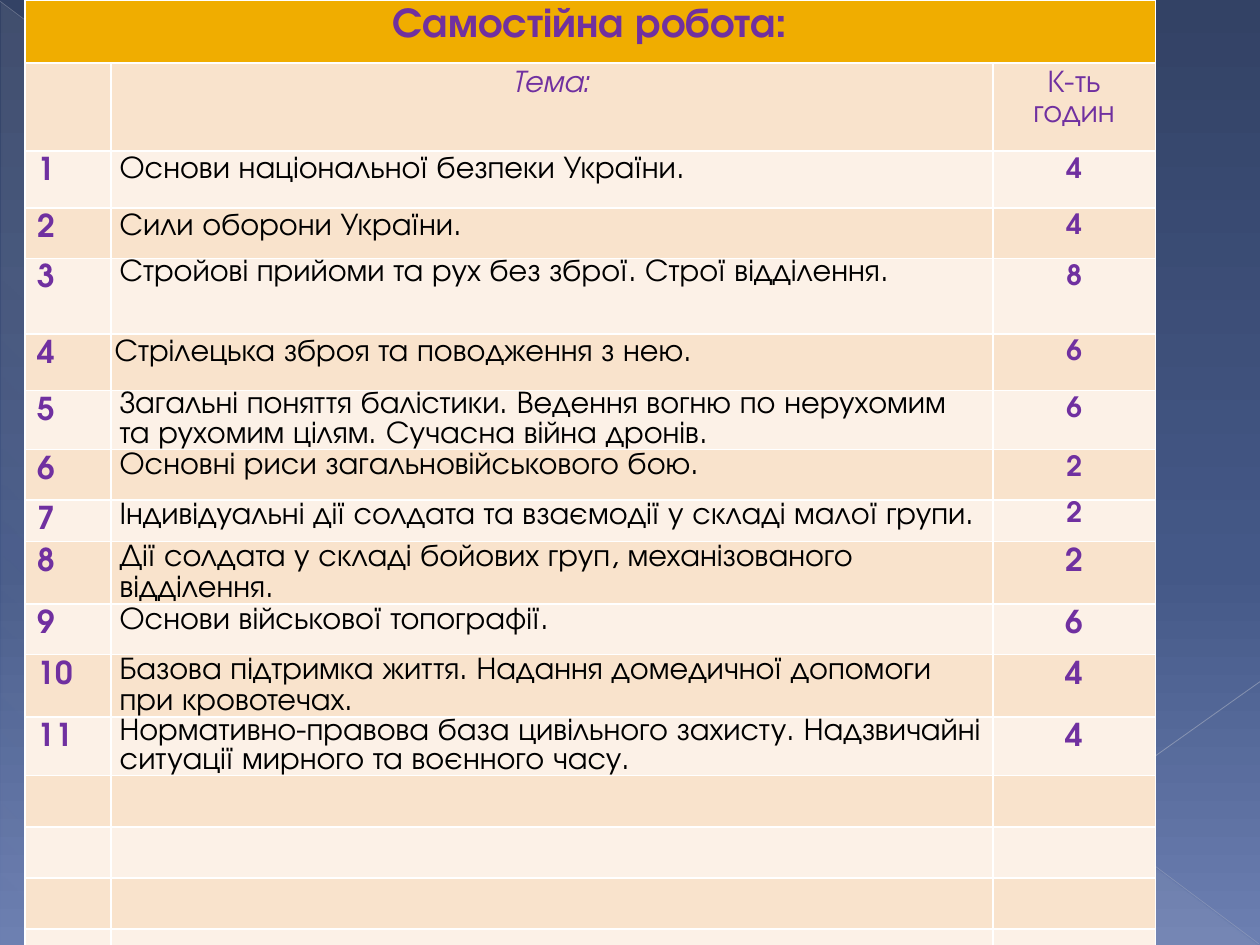
from pptx import Presentation
from pptx.dml.color import RGBColor
from pptx.enum.shapes import MSO_CONNECTOR, MSO_SHAPE
from pptx.enum.text import PP_ALIGN
from pptx.oxml import parse_xml
from pptx.oxml.ns import nsdecls, qn
from pptx.util import Inches, Pt

FONT = "TeX Gyre Adventor"
PURPLE = RGBColor(0x70, 0x30, 0xA0)
BLACK = RGBColor(0, 0, 0)
GOLD = RGBColor(0xF0, 0xAD, 0x00)
PEACH = RGBColor(0xF9, 0xE3, 0xCC)
CREAM = RGBColor(0xFC, 0xF1, 0xE7)
WHITE = RGBColor(0xFF, 0xFF, 0xFF)
NAVY = RGBColor(0x33, 0x42, 0x65)
BLUE = RGBColor(0x44, 0x58, 0x87)
SKY = RGBColor(0x6C, 0x7F, 0xB1)
SILVER = RGBColor(0xD4, 0xD4, 0xD6)
GREY = RGBColor(0xB9, 0xBD, 0xC8)
PALE_GREY = RGBColor(0xC1, 0xC4, 0xCE)

COLUMN_WIDTHS = [0.68, 7, 1.29]
ROW_HEIGHTS = [0.5, 0.7, 0.45, 0.4, 0.6, 0.45, 0.4, 0.4, 0.3] + [0.4] * 7 + [0.38]

WIDE = {"spacing": 1.15}
LOOSE = {"spacing": 1.06, "after": 8}
# Topic, hours, size of the hours, topic format
TOPICS = [
    ("Основи національної безпеки України.", 4, 16, WIDE),
    ("Сили оборони України.", 4, 16, WIDE),
    ("Стройові прийоми та рух без зброї. Строї відділення.", 8, 16, {}),
    ("Стрілецька зброя та поводження з нею.", 6, 16,
     {"spacing": 1.15, "after": 10, "side": 0.03}),
    ("Загальні поняття балістики. Ведення вогню по нерухомим та рухомим цілям. "
     "Сучасна війна дронів.", 6, 16, {}),
    ("Основні риси загальновійськового бою.", 2, 16, LOOSE),
    ("Індивідуальні дії солдата та взаємодії у складі малої групи.", 2, 16, LOOSE),
    ("Дії солдата у складі бойових груп, механізованого відділення.", 2, 18, LOOSE),
    ("Основи військової топографії.", 6, 18, LOOSE),
    ("Базова підтримка життя. Надання домедичної допомоги при кровотечах.", 4, 18, LOOSE),
    ("Нормативно-правова база цивільного захисту. Надзвичайні ситуації мирного "
     "та воєнного часу.", 4, 18, {}),
]
TIGHT_HOURS_ROW = 7


def set_gradient(fill, element, stops, angle):
    """Give a fill its stops (position, colour, opacity in percent) and angle."""
    fill.gradient()
    gradient = element.find(".//" + qn("a:gradFill"))
    stops_xml = "".join(
        f'<a:gs pos="{position * 1000}"><a:srgbClr val="{color}">'
        f'<a:alpha val="{opacity * 1000}"/></a:srgbClr></a:gs>'
        for position, color, opacity in stops)
    for child in list(gradient):
        gradient.remove(child)
    gradient.append(parse_xml(f'<a:gsLst {nsdecls("a")}>{stops_xml}</a:gsLst>'))
    gradient.append(parse_xml(
        f'<a:lin {nsdecls("a")} ang="{angle * 60000}" scaled="0"/>'))


def add_line(slide, start, end, color, width, opacity):
    points = [Inches(value) for value in (*start, *end)]
    line = slide.shapes.add_connector(MSO_CONNECTOR.STRAIGHT, *points)
    line.line.color.rgb = color
    line.line.width = Pt(width)
    line._element.find(".//" + qn("a:srgbClr")).append(
        parse_xml(f'<a:alpha {nsdecls("a")} val="{opacity * 1000}"/>'))
    line._element.spPr.append(parse_xml(f'<a:effectLst {nsdecls("a")}/>'))


def add_backdrop(slide):
    set_gradient(slide.background.fill, slide._element,
                 [(0, NAVY, 100), (60, BLUE, 100), (100, SKY, 100)], 90)
    triangle = slide.shapes.add_shape(
        MSO_SHAPE.RIGHT_TRIANGLE, Inches(0.01), Inches(0.02), Inches(9.98), Inches(7.48))
    triangle.shadow.inherit = False
    triangle.line.fill.background()
    set_gradient(triangle.fill, triangle._element,
                 [(0, SILVER, 10), (70, SILVER, 8), (100, SILVER, 1)], 133)
    add_line(slide, (0, 0.01), (9.99, 7.49), GREY, 0.39, 35)
    add_line(slide, (10, 5.41), (7.07, 7.49), PALE_GREY, 0.47, 45)


def style_cell(cell, color):
    cell.fill.solid()
    cell.fill.fore_color.rgb = color
    properties = cell._tc.get_or_add_tcPr()
    for index, side in enumerate(("lnL", "lnR", "lnT", "lnB")):
        properties.insert(index, parse_xml(
            f'<a:{side} {nsdecls("a")} w="12700"><a:solidFill>'
            f'<a:srgbClr val="{WHITE}"/></a:solidFill></a:{side}>'))


def write(cell, text, size=18, color=PURPLE, bold=False, italic=False,
          align=PP_ALIGN.LEFT, spacing=None, after=None, side=None):
    """Put text in a cell; side sets the side margins and clears the others."""
    if side is not None:
        cell.margin_left = cell.margin_right = Inches(side)
        cell.margin_top = cell.margin_bottom = 0
    paragraph = cell.text_frame.paragraphs[0]
    paragraph.alignment = align
    if spacing is not None:
        paragraph.line_spacing = spacing
    if after is not None:
        paragraph.space_after = Pt(after)
    run = paragraph.add_run()
    run.text = text
    run.font.name = FONT
    run.font.size = Pt(size)
    run.font.bold = bold
    run.font.italic = italic
    run.font.color.rgb = color


def add_grid(slide):
    frame = slide.shapes.add_table(
        len(ROW_HEIGHTS), len(COLUMN_WIDTHS), Inches(0.2), 0,
        Inches(sum(COLUMN_WIDTHS)), Inches(sum(ROW_HEIGHTS)))
    table = frame.table
    table.first_row = table.horz_banding = False
    for column, width in zip(table.columns, COLUMN_WIDTHS):
        column.width = Inches(width)
    for index, (row, height) in enumerate(zip(table.rows, ROW_HEIGHTS)):
        row.height = Inches(height)
        color = GOLD if index == 0 else PEACH if index % 2 else CREAM
        for cell in row.cells:
            style_cell(cell, color)
    table.cell(0, 0).merge(table.cell(0, 2))
    return table


def fill_grid(table):
    center = PP_ALIGN.CENTER
    write(table.cell(0, 0), "Самостійна робота:", size=24, bold=True, align=center)
    write(table.cell(1, 1), "Тема:", italic=True, align=center)
    write(table.cell(1, 2), "К-ть годин", align=center)
    for number, (topic, hours, hours_size, topic_format) in enumerate(TOPICS, 1):
        number_cell, topic_cell, hours_cell = table.rows[number + 1].cells
        write(number_cell, str(number), bold=True)
        write(topic_cell, topic, color=BLACK, **{"side": 0.07, **topic_format})
        hours_format = {"side": 0.07, **LOOSE} if number == TIGHT_HOURS_ROW else {}
        write(hours_cell, str(hours), size=hours_size, bold=True, align=center,
              **hours_format)


def main():
    presentation = Presentation()
    presentation.slide_width = Inches(10)
    presentation.slide_height = Inches(7.5)
    slide = presentation.slides.add_slide(presentation.slide_layouts[6])
    add_backdrop(slide)
    fill_grid(add_grid(slide))
    presentation.save("out.pptx")


if __name__ == "__main__":
    main()
